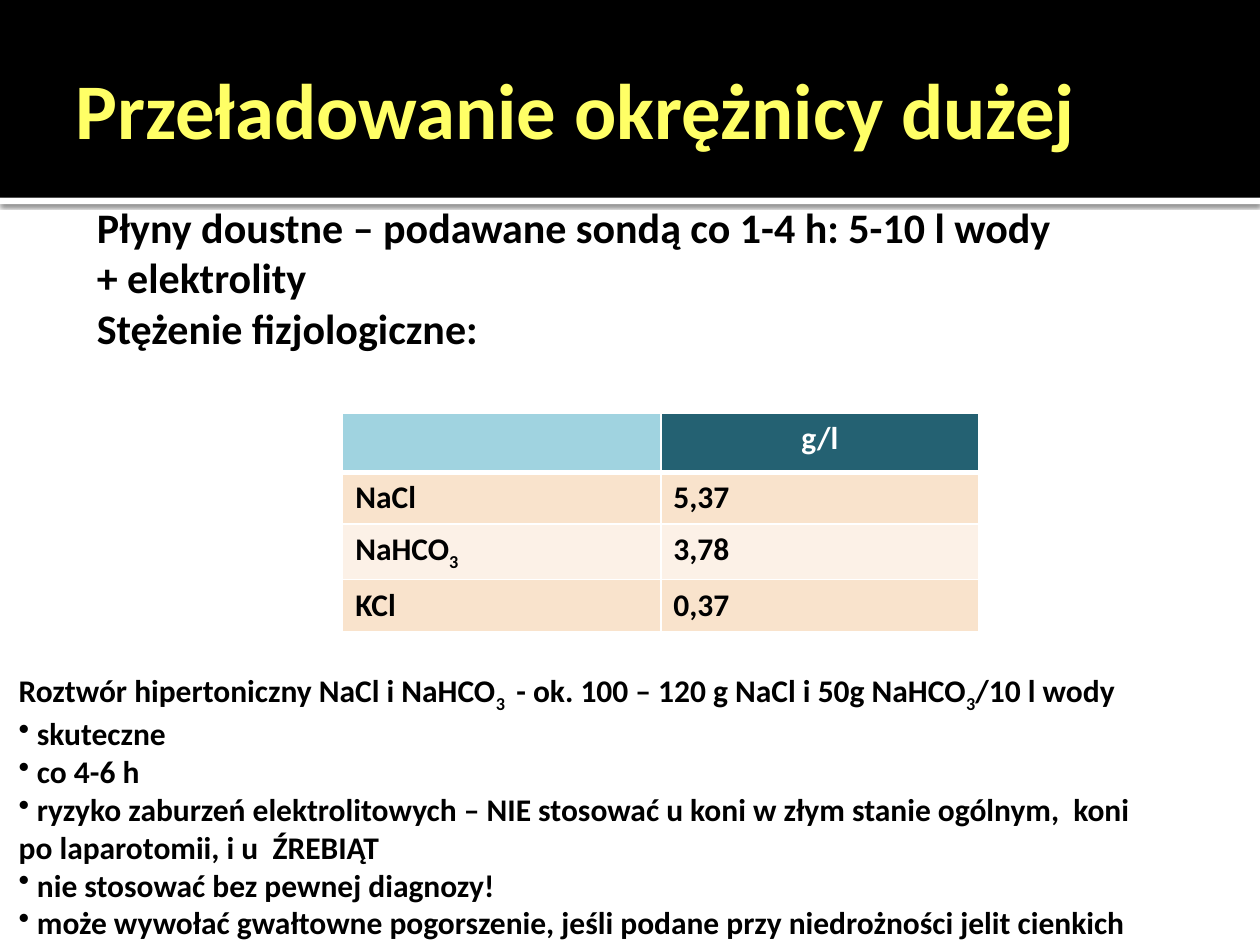
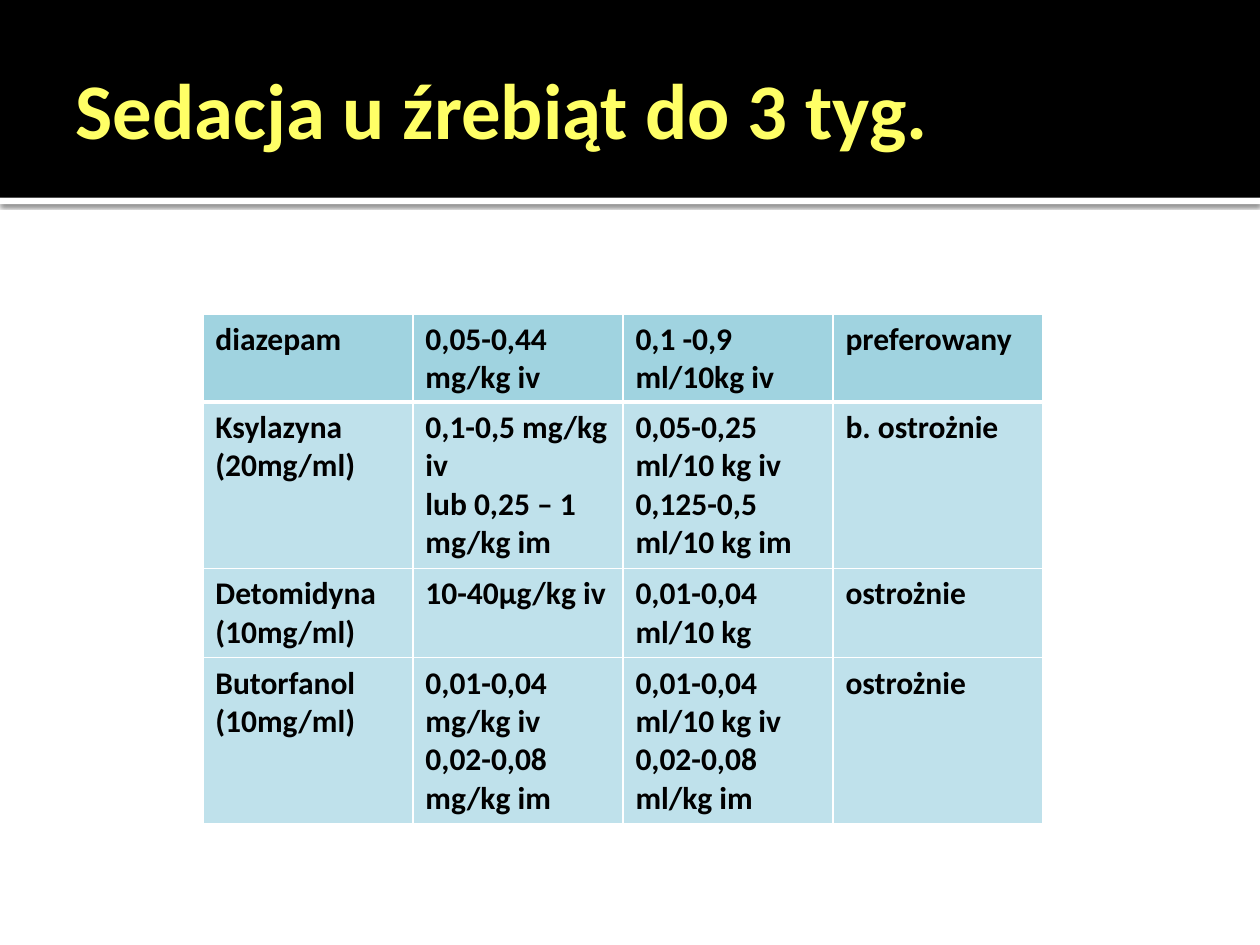
import pptx
import pptx.dml.color
import pptx.enum.shapes
import pptx.enum.text
import pptx.oxml
import pptx.util
from dataclasses import dataclass

Pt = pptx.util.Pt
ALIGN = pptx.enum.text.PP_ALIGN
DRAWING_NS = "http://schemas.openxmlformats.org/drawingml/2006/main"


@dataclass(frozen=True)
class Theme:
    font: str = "Calibri"
    black: str = "000000"
    white: str = "FFFFFF"
    title: str = "FFFF66"
    teal: str = "246172"
    blue: str = "A0D3E0"
    pale_blue: str = "BFE1EB"
    peach: str = "F9E3CC"
    pale_peach: str = "FCF1E7"
    title_size: int = 45
    lead_size: int = 24
    body_size: int = 18


def rgb(value):
    return pptx.dml.color.RGBColor.from_string(value)


def drawing_xml(body):
    """Build one DrawingML element given without its namespace declaration."""
    head, rest = body.split(" ", 1)
    return pptx.oxml.parse_xml(f'{head} xmlns:a="{DRAWING_NS}" {rest}')


class Deck:
    """Holds the theme and the current slide; lengths are cells of a 100 x 75 grid."""

    COLUMNS, ROWS = 100, 75

    def __init__(self, theme):
        self.theme = theme
        self.show = pptx.Presentation()
        self.show.slide_width = pptx.util.Inches(10)
        self.show.slide_height = pptx.util.Inches(7.5)
        self.slide = None

    def x(self, columns):
        return round(self.show.slide_width * columns / self.COLUMNS)

    def y(self, rows):
        return round(self.show.slide_height * rows / self.ROWS)

    def place(self, left, top, width, height):
        return self.x(left), self.y(top), self.x(width), self.y(height)

    def new_slide(self, title):
        """Start a slide with the black title band and the shadowed strip below it."""
        self.slide = self.show.slides.add_slide(self.show.slide_layouts[6])
        strip = self.band(15.7, 0.5, self.theme.white)
        effects = strip.find(f".//{{{DRAWING_NS}}}effectLst")
        effects.append(drawing_xml(
            f'<a:outerShdw blurRad="{Pt(2.5)}" dist="{Pt(0.8)}" dir="5400000" rotWithShape="0">'
            f'<a:srgbClr val="{self.theme.black}"><a:alpha val="60000"/></a:srgbClr></a:outerShdw>'))
        self.band(0, 15.7, self.theme.black)
        frame = self.text((5, 1.7, 90, 13.7), [title], self.theme.title_size,
                          self.theme.title, wrap=True)
        frame.vertical_anchor = pptx.enum.text.MSO_ANCHOR.MIDDLE
        frame.margin_right = self.x(0.5)

    def band(self, top, height, color):
        band = self.slide.shapes.add_shape(
            pptx.enum.shapes.MSO_SHAPE.RECTANGLE, *self.place(0, top, self.COLUMNS, height))
        band.shadow.inherit = False
        band.fill.solid()
        band.fill.fore_color.rgb = rgb(color)
        band.line.fill.background()
        return band.element

    def text(self, box, lines, size, color, wrap=False):
        frame = self.slide.shapes.add_textbox(*self.place(*box)).text_frame
        frame.word_wrap = wrap
        if not wrap:
            frame.auto_size = pptx.enum.text.MSO_AUTO_SIZE.SHAPE_TO_FIT_TEXT
        self.set_lines(frame, lines, size, color)
        return frame

    def set_lines(self, frame, lines, size, color, align=ALIGN.LEFT):
        """Fill a frame: a leading bullet makes a list item, ~marks~ make a subscript."""
        for number, line in enumerate(lines):
            paragraph = frame.add_paragraph() if number else frame.paragraphs[0]
            paragraph.alignment = align
            if line.startswith("•"):
                line = line[1:]
                paragraph._p.get_or_add_pPr().append(drawing_xml('<a:buChar char="•"/>'))
            for position, part in enumerate(line.split("~")):
                run = paragraph.add_run()
                run.text = part
                run.font.name = self.theme.font
                run.font.size = Pt(size)
                run.font.bold = True
                run.font.color.rgb = rgb(color)
                if position % 2:
                    run.font._element.set("baseline", "-25000")

    def table(self, left, top, column_width, row_heights, rows, fills):
        """Add a table; each cell is text whose paragraphs are split by line ends."""
        columns = len(rows[0])
        table = self.slide.shapes.add_table(
            len(rows), columns,
            *self.place(left, top, column_width * columns, sum(row_heights))).table
        table.first_row = table.horz_banding = False
        for column in table.columns:
            column.width = self.x(column_width)
        for r, (row, height) in enumerate(zip(rows, row_heights)):
            table.rows[r].height = self.y(height)
            for c, content in enumerate(row):
                cell = table.cell(r, c)
                fill = fills[r][c]
                self.borders(cell, top=3 if r == 1 else 1, bottom=3 if r == 0 else 1)
                cell.fill.solid()
                cell.fill.fore_color.rgb = rgb(fill)
                dark = fill == self.theme.teal
                self.set_lines(cell.text_frame, content.split("\n"), self.theme.body_size,
                               self.theme.white if dark else self.theme.black,
                               ALIGN.CENTER if dark else ALIGN.LEFT)

    def borders(self, cell, top, bottom):
        properties = cell._tc.get_or_add_tcPr()
        for side, weight in (("L", 1), ("R", 1), ("T", top), ("B", bottom)):
            properties.append(drawing_xml(
                f'<a:ln{side} w="{Pt(weight)}"><a:solidFill>'
                f'<a:srgbClr val="{self.theme.white}"/></a:solidFill></a:ln{side}>'))


def colon_overload(deck):
    theme = deck.theme
    deck.new_slide("Przeładowanie okrężnicy dużej")

    # Physiological concentrations
    deck.table(27.2, 32.8, 25.25, [4.7, 4.1, 4.4, 4.1],
               [["", "g/l"], ["NaCl", "5,37"], ["NaHCO~3~", "3,78"], ["KCl", "0,37"]],
               [[theme.blue, theme.teal], [theme.peach] * 2,
                [theme.pale_peach] * 2, [theme.peach] * 2])

    # Oral fluids
    deck.text((6.7, 15.5, 79.2, 13.1),
              ["Płyny doustne – podawane sondą co 1-4 h: 5-10 l wody",
               "+ elektrolity",
               "Stężenie fizjologiczne:"], theme.lead_size, theme.black)

    # Hypertonic solution and its risks
    deck.text((0.5, 52.8, 90.7, 22.2),
              ["Roztwór hipertoniczny NaCl i NaHCO~3 ~ - ok. 100 – 120 g NaCl i 50g NaHCO~3~/10 l wody",
               "• skuteczne",
               "• co 4-6 h",
               "• ryzyko zaburzeń elektrolitowych – NIE stosować u koni w złym stanie ogólnym,  koni",
               "po laparotomii, i u  ŹREBIĄT",
               "• nie stosować bez pewnej diagnozy!",
               "• może wywołać gwałtowne pogorszenie, jeśli podane przy niedrożności jelit cienkich"],
              theme.body_size, theme.black)


def foal_sedation(deck):
    theme = deck.theme
    deck.new_slide("Sedacja u źrebiąt do 3 tyg.")

    # Drugs, doses, volumes and cautions
    drugs = [
        ["diazepam", "0,05-0,44 mg/kg iv", "0,1 -0,9 ml/10kg iv", "preferowany"],
        ["Ksylazyna (20mg/ml)", "0,1-0,5 mg/kg iv\nlub 0,25 – 1 mg/kg im",
         "0,05-0,25 ml/10 kg iv\n0,125-0,5 ml/10 kg im", "b. ostrożnie"],
        ["Detomidyna (10mg/ml)", "10-40µg/kg iv", "0,01-0,04 ml/10 kg", "ostrożnie"],
        ["Butorfanol (10mg/ml)", "0,01-0,04 mg/kg iv\n0,02-0,08 mg/kg im",
         "0,01-0,04 ml/10 kg iv\n0,02-0,08 ml/kg im", "ostrożnie"],
    ]
    deck.table(16.1, 24.9, 16.67, [7, 13.2, 7.1, 13.2], drugs,
               [[theme.blue] * 4] + [[theme.pale_blue] * 4] * 3)


def main():
    deck = Deck(Theme())
    colon_overload(deck)
    foal_sedation(deck)
    deck.show.save("out.pptx")


if __name__ == "__main__":
    main()
